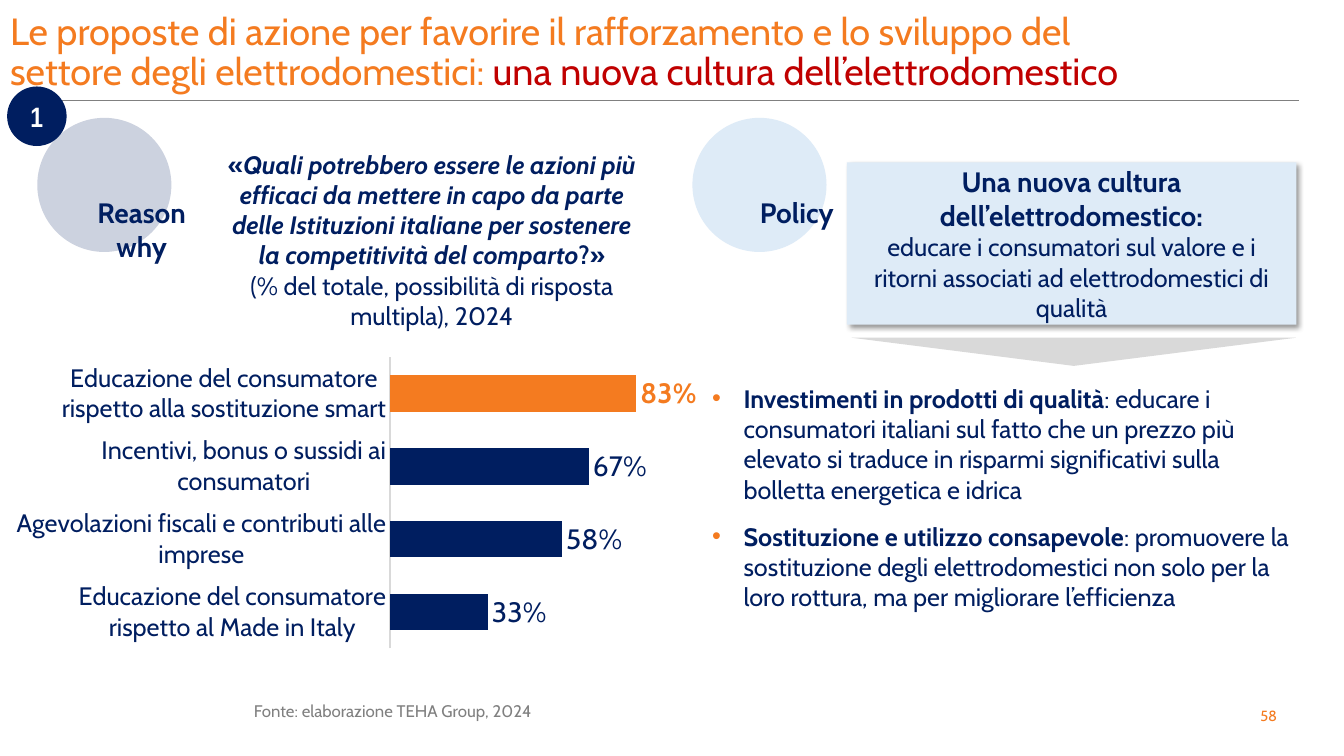
from dataclasses import dataclass

from lxml import etree
from pptx import Presentation
from pptx import util as u
from pptx.chart.data import CategoryChartData
from pptx.dml.color import RGBColor
from pptx.enum import chart as charts, shapes, text
from pptx.oxml import parse_xml
from pptx.oxml.ns import nsdecls, qn


@dataclass(frozen=True)
class Theme:
    font: str = "Cabin"
    slim: str = "Arial Narrow"
    navy: str = "001E60"
    orange: str = "F47B20"
    red: str = "C00000"
    pale: str = "DEEBF7"
    gray: str = "808080"
    light: str = "D9D9D9"
    white: str = "FFFFFF"
    title: float = 27
    head: float = 20
    body: float = 18
    note: float = 12
    page: float = 10.5


def rgb(code):
    return RGBColor.from_string(code)


class Deck:
    def __init__(self, theme):
        self.theme = theme
        self.prs = Presentation()
        self.prs.slide_width, self.prs.slide_height = u.Cm(33.87), u.Cm(19.05)
        self.slide = self.prs.slides.add_slide(self.prs.slide_layouts[5])

    def style(self, font, size, color, bold=False, italic=False, face=None):
        font.name = face or self.theme.font
        font.size = u.Pt(size)
        font.color.rgb = rgb(color)
        font.bold, font.italic = bold, italic

    def put(self, par, runs, size, color, align=text.PP_ALIGN.LEFT, face=None):
        """Each run is (words, marks): b is bold, i is italic, r is red."""
        par.alignment = align
        for words, marks in runs:
            run = par.add_run()
            run.text = words
            tone = self.theme.red if "r" in marks else color
            self.style(run.font, size, tone, "b" in marks, "i" in marks, face)

    def title(self, box, lines):
        shape = self.slide.shapes.title
        shape.left, shape.top, shape.width, shape.height = map(u.Cm, box)
        frame = shape.text_frame
        frame.auto_size = text.MSO_AUTO_SIZE.NONE
        frame.vertical_anchor = text.MSO_ANCHOR.MIDDLE
        par = frame.paragraphs[0]
        par.line_spacing = 0.9
        for i, runs in enumerate(lines):
            if i:
                par.add_line_break()
            self.put(par, runs, self.theme.title, self.theme.orange)

    def label(self, box, paras, size, color=None, align=text.PP_ALIGN.CENTER):
        frame = self.slide.shapes.add_textbox(*map(u.Cm, box)).text_frame
        frame.word_wrap = True
        for i, runs in enumerate(paras):
            par = frame.add_paragraph() if i else frame.paragraphs[0]
            self.put(par, runs, size, color or self.theme.navy, align)
        return frame

    def bullets(self, box, paras):
        frame = self.label(box, paras, self.theme.body, align=text.PP_ALIGN.LEFT)
        for i, par in enumerate(frame.paragraphs):
            par.space_before, par.space_after = u.Pt(6 if i else 0), u.Pt(6)
            props = par._p.get_or_add_pPr()
            props.set("marL", str(u.Cm(0.79)))
            props.set("indent", str(-u.Cm(0.79)))
            tint = etree.SubElement(props, qn("a:buClr"))
            etree.SubElement(tint, qn("a:srgbClr"), val=self.theme.orange)
            etree.SubElement(props, qn("a:buFont"), typeface="Arial")
            etree.SubElement(props, qn("a:buChar"), char="•")

    def shape(self, kind, box, fill, alpha=None):
        item = self.slide.shapes.add_shape(kind, *map(u.Cm, box))
        item.shadow.inherit = False
        item.fill.solid()
        item.fill.fore_color.rgb = rgb(fill)
        item.line.fill.background()
        if alpha:
            tint = item._element.spPr.find(".//" + qn("a:srgbClr"))
            etree.SubElement(tint, qn("a:alpha"), val=str(alpha * 1000))
        return item

    def shade(self, item):
        fx = item._element.spPr.find(qn("a:effectLst"))
        fx.append(parse_xml(
            f'<a:outerShdw {nsdecls("a")} blurRad="{u.Pt(4)}" dist="{u.Pt(3)}" '
            'dir="2700000" algn="tl" rotWithShape="0"><a:srgbClr val="000000">'
            '<a:alpha val="40000"/></a:srgbClr></a:outerShdw>'))

    def rule(self, ends, color, width):
        line = self.slide.shapes.add_connector(
            shapes.MSO_CONNECTOR.STRAIGHT, *map(u.Cm, ends))
        line.line.color.rgb = rgb(color)
        line.line.width = u.Pt(width)
        etree.SubElement(line._element.spPr, qn("a:effectLst"))

    def bars(self, box, rows, plot):
        """Draw rows bottom-up; the last one is highlighted."""
        t = self.theme
        data = CategoryChartData(number_format="0%")
        data.categories = [name for name, _ in rows]
        data.add_series("Series 1", [value for _, value in rows])
        chart = self.slide.shapes.add_chart(
            charts.XL_CHART_TYPE.BAR_CLUSTERED, *map(u.Cm, box), data).chart
        chart.has_title = chart.has_legend = False
        self.style(chart.font, t.body, t.navy)

        # Axes
        cat, val = chart.category_axis, chart.value_axis
        cat.major_tick_mark = charts.XL_TICK_MARK.NONE
        cat.format.line.color.rgb = rgb(t.light)
        cat.format.line.width = u.Pt(0.75)
        self.style(cat.tick_labels.font, t.body, t.navy)
        val.minimum_scale, val.maximum_scale = 0, 0.9
        val.has_major_gridlines = val.visible = False

        # Bars and values
        group = chart.plots[0]
        group.gap_width, group.vary_by_categories = 100, False
        series = group.series[0]
        series.format.fill.solid()
        series.format.fill.fore_color.rgb = rgb(t.navy)
        tags = series.data_labels
        tags.show_value = True
        tags.number_format, tags.number_format_is_linked = "0%", False
        tags.position = charts.XL_LABEL_POSITION.OUTSIDE_END
        self.style(tags.font, t.head, t.navy)
        top = series.points[len(rows) - 1]
        top.format.fill.solid()
        top.format.fill.fore_color.rgb = rgb(t.orange)
        self.style(top.data_label.font, t.head, t.orange, bold=True)
        top.data_label.position = charts.XL_LABEL_POSITION.OUTSIDE_END

        # Plot area
        area = chart._chartSpace.chart.plotArea
        for old in area.findall(qn("c:layout")):
            area.remove(old)
        layout = etree.Element(qn("c:layout"))
        manual = etree.SubElement(layout, qn("c:manualLayout"))
        spots = [("layoutTarget", "inner"), ("xMode", "edge"), ("yMode", "edge")]
        for tag, value in spots + list(zip("xywh", plot)):
            etree.SubElement(manual, qn("c:" + tag), val=str(value))
        area.insert(0, layout)


def main():
    t = Theme()
    deck = Deck(t)
    kinds = shapes.MSO_SHAPE

    # Title, rule, source and page number
    deck.rule((1.12, 2.54, 32.74, 2.54), t.gray, 0.5)
    deck.title((0, 0.58, 33.6, 1.52), [
        [("Le proposte di azione per favorire il rafforzamento e lo sviluppo del", "")],
        [("settore degli elettrodomestici: ", ""),
         ("una nuova cultura dell’elettrodomestico", "r")]])
    deck.label((6.15, 17.53, 24.59, 0.76),
               [[("Fonte: elaborazione TEHA Group, 2024", "")]],
               t.note, t.gray, text.PP_ALIGN.LEFT)
    deck.label((31.39, 17.68, 1.17, 0.74), [[("58", "")]], t.page, t.orange)

    # Section discs
    for left, name, fill, alpha in ((0.94, "Reason why", t.navy, 20),
                                    (17.45, "Policy", t.pale, None)):
        deck.shape(kinds.OVAL, (left, 2.97, 3.38, 3.38), fill, alpha)
        deck.label((left + 1.12, 4.8, 3.02, 1.96), [[(name, "b")]], t.head)

    # Survey question and answers
    deck.label((5.36, 3.63, 11.05, 3.2), [
        [("«", "b"),
         ("Quali potrebbero essere le azioni più efficaci da mettere in capo da "
          "parte delle Istituzioni italiane per sostenere la competitività del "
          "comparto", "bi"),
         ("?»", "b")],
        [("(% del totale, possibilità di risposta multipla), 2024", "")]], t.body)
    deck.bars((0.36, 8.76, 18.21, 7.9), [
        ("Educazione del consumatore rispetto al Made in Italy", 0.33),
        ("Agevolazioni fiscali e contributi alle imprese", 0.58),
        ("Incentivi, bonus o sussidi ai consumatori", 0.67),
        ("Educazione del consumatore rispetto alla sostituzione smart", 0.83),
    ], (0.52, 0.03, 0.37, 0.93))

    # Policy card and its pointer
    card = deck.shape(kinds.RECTANGLE, (21.34, 4.09, 11.33, 4.09), t.pale)
    deck.shade(card)
    frame = card.text_frame
    frame.word_wrap = True
    frame.vertical_anchor = text.MSO_ANCHOR.MIDDLE
    mid = text.PP_ALIGN.CENTER
    deck.put(frame.paragraphs[0],
             [("Una nuova cultura dell’elettrodomestico:", "b")], t.head, t.navy, mid)
    deck.put(frame.add_paragraph(),
             [("educare i consumatori sul valore e i ritorni associati ad "
               "elettrodomestici di qualità", "")], t.body, t.navy, mid)
    deck.shape(kinds.ISOSCELES_TRIANGLE, (21.46, 8.51, 11.2, 0.71), t.light).rotation = 180

    # Policy actions
    deck.bullets((17.7, 9.53, 15.49, 6.07), [
        [("Investimenti in prodotti di qualità", "b"),
         (": educare i consumatori italiani sul fatto che un prezzo più elevato si "
          "traduce in risparmi significativi sulla bolletta energetica e idrica", "")],
        [("Sostituzione e utilizzo consapevole", "b"),
         (": promuovere la sostituzione degli elettrodomestici non solo per la loro "
          "rottura, ma per migliorare l’efficienza", "")]])

    # Number badge
    badge = deck.shape(kinds.OVAL, (0.18, 2.18, 1.5, 1.5), t.navy).text_frame
    badge.margin_left = badge.margin_right = badge.margin_top = badge.margin_bottom = 0
    badge.vertical_anchor = text.MSO_ANCHOR.MIDDLE
    deck.put(badge.paragraphs[0], [("1", "b")], t.head, t.white, mid, t.slim)

    deck.prs.save("out.pptx")


if __name__ == "__main__":
    main()
